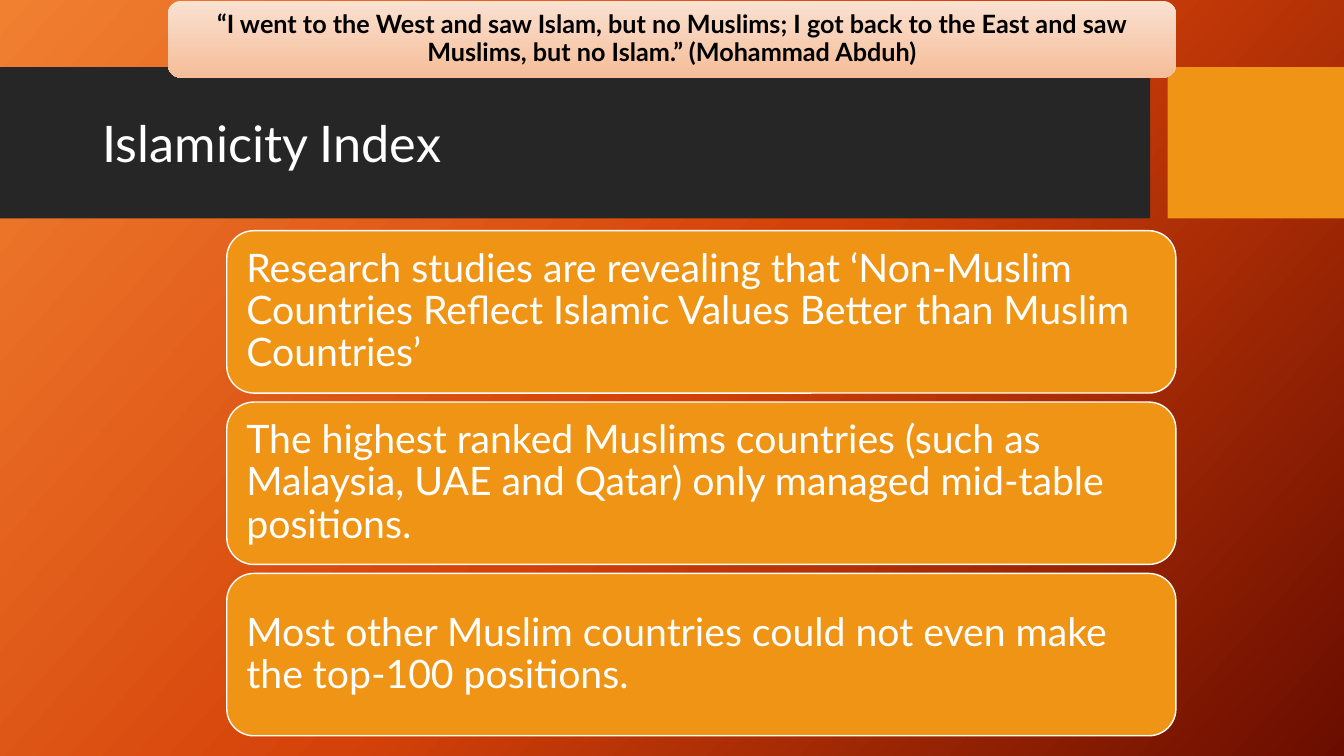
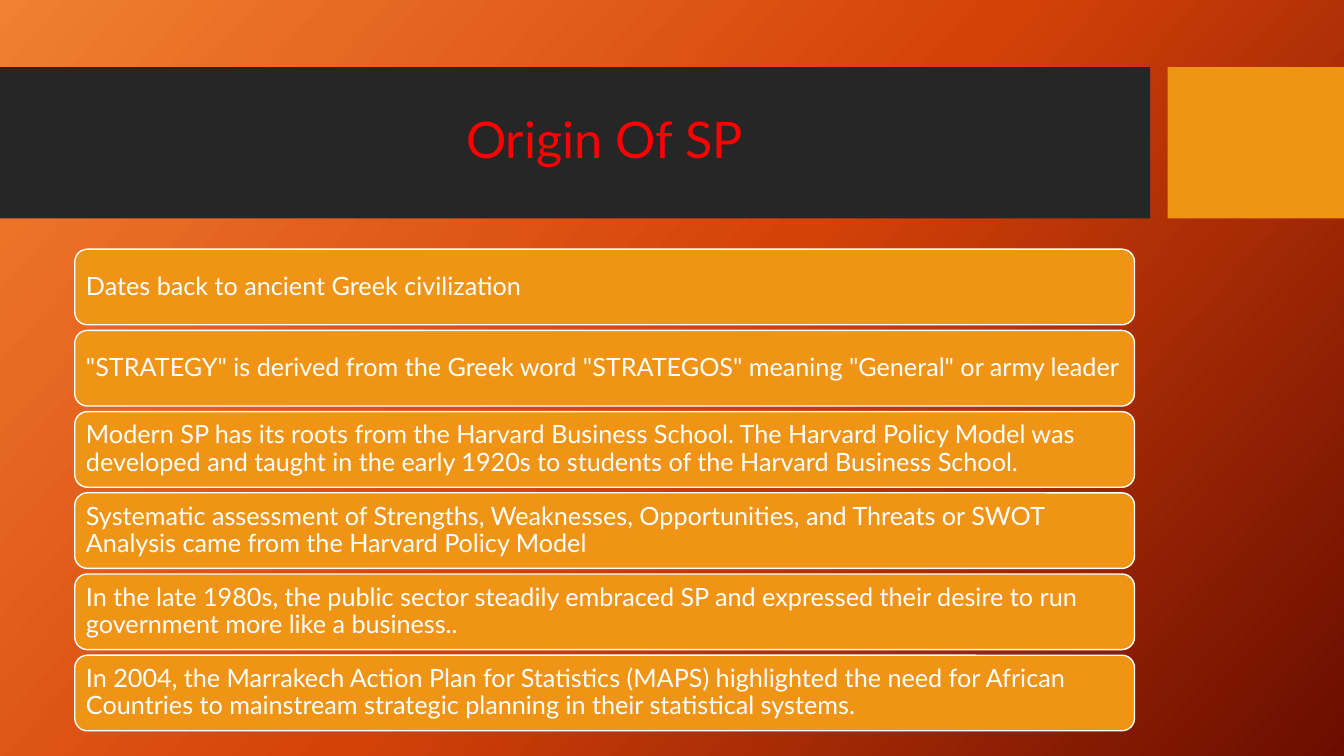
from copy import deepcopy

from pptx import Presentation
from pptx.dml.color import RGBColor
from pptx.enum.shapes import MSO_SHAPE
from pptx.enum.text import MSO_ANCHOR, MSO_AUTO_SIZE, PP_ALIGN
from pptx.oxml.ns import qn
from pptx.util import Pt

RECT, ROUND = MSO_SHAPE.RECTANGLE, MSO_SHAPE.ROUNDED_RECTANGLE
LEFT, CENTER = PP_ALIGN.LEFT, PP_ALIGN.CENTER
MIDDLE, NO_FIT = MSO_ANCHOR.MIDDLE, MSO_AUTO_SIZE.NONE

FONT = "Lato"
WHITE = RGBColor(0xFF, 0xFF, 0xFF)
BLACK = RGBColor(0x00, 0x00, 0x00)
RED = RGBColor(0xFF, 0x00, 0x00)
DARK = RGBColor(0x26, 0x26, 0x26)
AMBER = RGBColor(0xF0, 0x94, 0x15)
GLOW = (RGBColor(0xF1, 0x80, 0x31), RGBColor(0xD5, 0x42, 0x09),
        RGBColor(0x6A, 0x0D, 0x00))
PEACH = (RGBColor(0xFA, 0xE1, 0xD1), RGBColor(0xF5, 0xBD, 0x98))

WIDE, HIGH = 960, 540
BAND_TOP, BAND_HIGH = 48, 108

INDEX = (
    "Research studies are revealing that ‘Non-Muslim Countries Reflect "
    "Islamic Values Better than Muslim Countries’",
    "The highest ranked Muslims countries (such as Malaysia, UAE and Qatar) "
    "only managed mid-table positions.",
    "Most other Muslim countries could not even make the top-100 positions.",
)
QUOTE = ("“I went to the West and saw Islam, but no Muslims; I got back to the "
         "East and saw Muslims, but no Islam.” (Mohammad Abduh)")
ORIGIN = (
    "Dates back to ancient Greek civilization",
    '"STRATEGY" is derived from the Greek word "STRATEGOS" meaning "General" '
    "or army leader",
    "Modern SP has its roots from the Harvard Business School. The Harvard "
    "Policy Model was developed and taught in the early 1920s to students of "
    "the Harvard Business School.",
    "Systematic assessment of Strengths, Weaknesses, Opportunities, and "
    "Threats or SWOT Analysis came from the Harvard Policy Model",
    "In the late 1980s, the public sector steadily embraced SP and expressed "
    "their desire to run government more like a business..",
    "In 2004, the Marrakech Action Plan for Statistics (MAPS) highlighted the "
    "need for African Countries to mainstream strategic planning in their "
    "statistical systems.",
)


def blend(fill, host, tones, angle):
    """Give fill evenly spaced gradient stops; angle runs clockwise."""
    fill.gradient()
    stops = host.find(".//" + qn("a:gsLst"))
    while len(stops) < len(tones):
        stops.append(deepcopy(stops[0]))
    for i, (stop, tone) in enumerate(zip(fill.gradient_stops, tones)):
        stop.color.rgb = tone
        stop.position = i / (len(tones) - 1)
    fill.gradient_angle = 360 - angle


def write(frame, text, size, color, align=LEFT, bold=False):
    frame.text = text
    frame.word_wrap = True
    frame.auto_size = NO_FIT
    frame.vertical_anchor = MIDDLE
    para = frame.paragraphs[0]
    para.alignment = align
    para.line_spacing = 0.9
    font = para.runs[0].font
    font.name, font.size, font.bold = FONT, Pt(size), bold
    font.color.rgb = color


def block(slide, kind, box, fill=None):
    shape = slide.shapes.add_shape(kind, *map(Pt, box))
    shape.shadow.inherit = False
    shape.line.fill.background()
    if fill is not None:
        shape.fill.solid()
        shape.fill.fore_color.rgb = fill
    return shape


def label(shape, text, size, color, **style):
    """Write text in a shape with margins in proportion to its size."""
    frame = shape.text_frame
    pad = Pt(0.3 * size)
    frame.margin_left = frame.margin_right = pad
    frame.margin_top = frame.margin_bottom = pad
    write(frame, text, size, color, **style)


def theme(deck, layout, slide):
    """Set the background and move the header bands to the layout."""
    master = deck.slide_master
    blend(master.background.fill, master.element, GLOW, 42)
    tree = layout.shapes.element
    bands = ((0, 821.5, DARK), (834, WIDE - 834, AMBER))
    for i, (left, wide, fill) in enumerate(bands):
        band = block(slide, RECT, (left, BAND_TOP, wide, BAND_HIGH), fill)
        band.element.nvSpPr.cNvPr.set("id", str(100 + i))
        tree.insert(2 + i, band.element)


def title(slide, text, box, color, align=LEFT):
    head = slide.shapes.title
    head.left, head.top, head.width, head.height = map(Pt, box)
    write(head.text_frame, text, 36, color, align)


def cards(slide, texts, box, gap, size):
    left, top, wide, high = box
    each = (high - gap * (len(texts) - 1)) / len(texts)
    for i, text in enumerate(texts):
        spot = (left, top + i * (each + gap), wide, each)
        card = block(slide, ROUND, spot, AMBER)
        card.line.color.rgb = WHITE
        card.line.width = Pt(1)
        label(card, text, size, WHITE)


def quote(slide, text, box):
    shape = block(slide, ROUND, box)
    blend(shape.fill, shape.element, PEACH, 90)
    label(shape, text, 18, BLACK, align=CENTER, bold=True)


def main():
    deck = Presentation()
    deck.slide_width, deck.slide_height = Pt(WIDE), Pt(HIGH)
    layout = deck.slide_layouts.get_by_name("Title Only")

    slide = deck.slides.add_slide(layout)
    theme(deck, layout, slide)
    title(slide, "Islamicity Index", (66, 77, 809, 55.5), WHITE)
    cards(slide, INDEX, (162, 164.8, 678, 360.8), 6.4, 28)
    quote(slide, QUOTE, (120, 0.7, 720, 54.7))

    slide = deck.slides.add_slide(layout)
    title(slide, "Origin Of SP", (53.4, 59, 757, 85), RED, CENTER)
    cards(slide, ORIGIN, (53.4, 178, 757, 344), 4, 18)

    deck.save("out.pptx")


if __name__ == "__main__":
    main()
